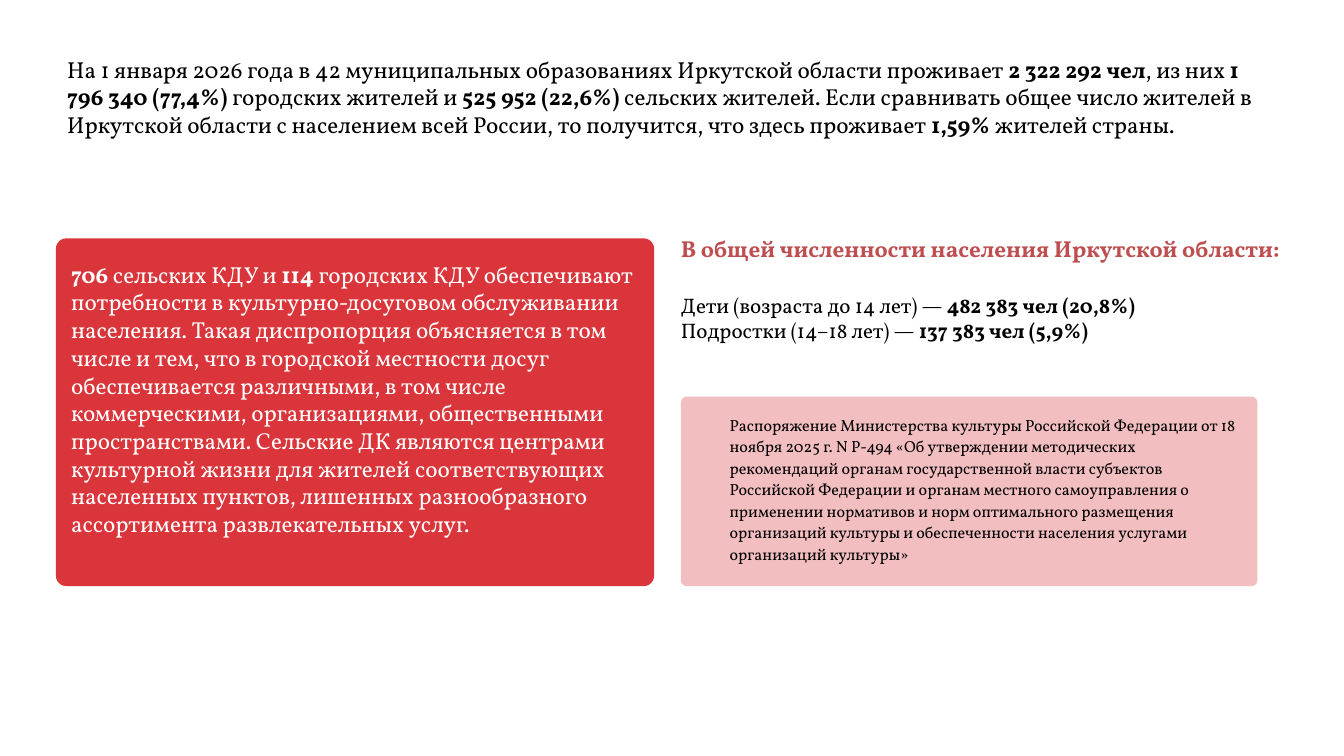
from lxml import etree
from pptx import Presentation
from pptx.dml.color import RGBColor
from pptx.enum.shapes import MSO_SHAPE
from pptx.enum.text import MSO_ANCHOR, MSO_AUTO_SIZE, PP_ALIGN
from pptx.oxml.ns import qn
from pptx.util import Inches, Pt

ROUNDED = MSO_SHAPE.ROUNDED_RECTANGLE
TOP, LEFT, NO_FIT = MSO_ANCHOR.TOP, PP_ALIGN.LEFT, MSO_AUTO_SIZE.NONE

BLACK, WHITE = "000000", "FFFFFF"
RED, PINK, ROSE = "DA353A", "F3BEC0", "BF4E50"

# Shares of the slide, in percent
LEFT_X, LEFT_W = 4.16, 44.51
RIGHT_X, RIGHT_W = 50.66, 42.89
ROW_TOP, ROW_BOTTOM = 31.53, 77.53
PINK_TOP = 52.47

INTRO = ("На 1 января 2026 года в 42 муниципальных образованиях Иркутской области "
         "проживает **2 322 292 чел**, из них **1 796 340 (77,4%)** городских жителей "
         "и **525 952 (22,6%)** сельских жителей. Если сравнивать общее число жителей "
         "в Иркутской области с населением всей России, то получится, что здесь "
         "проживает **1,59%** жителей страны.")
CLUBS = ("**706** сельских КДУ и **114** городских КДУ обеспечивают потребности в "
         "культурно-досуговом обслуживании населения. Такая диспропорция объясняется "
         "в том числе и тем, что в городской местности досуг обеспечивается "
         "различными, в том числе коммерческими, организациями, общественными "
         "пространствами. Сельские ДК являются центрами культурной жизни для жителей "
         "соответствующих населенных пунктов, лишенных разнообразного ассортимента "
         "развлекательных услуг.")
HEADING = "**В общей численности населения Иркутской области:**"
AGE_GROUPS = ["Дети (возраста до 14 лет) — **482 383 чел (20,8%)**",
              "Подростки (14–18 лет) — **137 383 чел (5,9%)**"]
ORDER = ("Распоряжение Министерства культуры Российской Федерации от 18 ноября 2025 г. "
         "N Р-494 «Об утверждении методических рекомендаций органам государственной "
         "власти субъектов Российской Федерации и органам местного самоуправления о "
         "применении нормативов и норм оптимального размещения организаций культуры и "
         "обеспеченности населения услугами организаций культуры»")


def rgb(color):
    return RGBColor.from_string(color)


def write(tf, paragraphs, size=33, color=BLACK, font="Vollkorn", leading=None):
    """Fill a text frame; parts between ** marks are bold."""
    tf.word_wrap, tf.auto_size, tf.vertical_anchor = True, NO_FIT, TOP
    tf.margin_left = tf.margin_top = tf.margin_right = tf.margin_bottom = 0
    for i, text in enumerate(paragraphs):
        p = tf.add_paragraph() if i else tf.paragraphs[0]
        pPr = p._p.get_or_add_pPr()
        pPr.set("marL", "0")
        pPr.set("indent", "0")
        etree.SubElement(pPr, qn("a:buNone"))
        p.alignment, p.space_before = LEFT, Pt(0)
        if leading:
            p.line_spacing = Pt(leading)
        for j, part in enumerate(text.split("**")):
            if part:
                r = p.add_run()
                r.text = part
                r.font.name, r.font.size = font, Pt(size)
                r.font.bold = j % 2 == 1
                r.font.color.rgb = rgb(color)


class Deck:
    """Holds the presentation and the current slide; lengths are percentages."""

    def __init__(self, width, height):
        self.prs = Presentation()
        self.prs.slide_width, self.prs.slide_height = Inches(width), Inches(height)
        self.s = self.prs.slides.add_slide(self.prs.slide_layouts[1])
        self.s.background.fill.solid()
        self.s.background.fill.fore_color.rgb = rgb(WHITE)

    def box(self, x, y, w, h):
        sw, sh = self.prs.slide_width, self.prs.slide_height
        return [round(v * side / 100) for v, side in zip((x, y, w, h), (sw, sh, sw, sh))]

    def card(self, x, y, w, h, fill, corner):
        sp = self.s.shapes.add_shape(ROUNDED, *self.box(x, y, w, h))
        sp.adjustments[0] = corner
        sp.shadow.inherit = False
        sp.fill.solid()
        sp.fill.fore_color.rgb = rgb(fill)
        sp.line.fill.background()

    def text(self, x, y, w, h, text, **style):
        sp = self.s.shapes.add_textbox(*self.box(x, y, w, h))
        write(sp.text_frame, [text], **style)

    def placeholder(self, index, x, y, w, h, paragraphs, **style):
        sp = self.s.placeholders[index]
        sp.left, sp.top, sp.width, sp.height = self.box(x, y, w, h)
        write(sp.text_frame, paragraphs, **style)


def main():
    deck = Deck(26.67, 15)
    deck.text(5, 7.27, 88.53, 20.13, INTRO)
    deck.card(LEFT_X, ROW_TOP, LEFT_W, ROW_BOTTOM - ROW_TOP, RED, 0.03)
    deck.text(5.29, 34.4, 42.26, 23.6, CLUBS, color=WHITE)
    deck.placeholder(0, RIGHT_X, ROW_TOP, 46, 3.13, [HEADING], color=ROSE, leading=33.3)
    deck.placeholder(1, RIGHT_X, 38.73, RIGHT_W, 6.4, AGE_GROUPS, size=30)
    deck.card(RIGHT_X, PINK_TOP, RIGHT_W, ROW_BOTTOM - PINK_TOP, PINK, 0.03)
    deck.text(54.29, 54.6, 38.13, 20.4, ORDER, size=23, leading=30.8)
    deck.prs.save("out.pptx")


if __name__ == "__main__":
    main()
